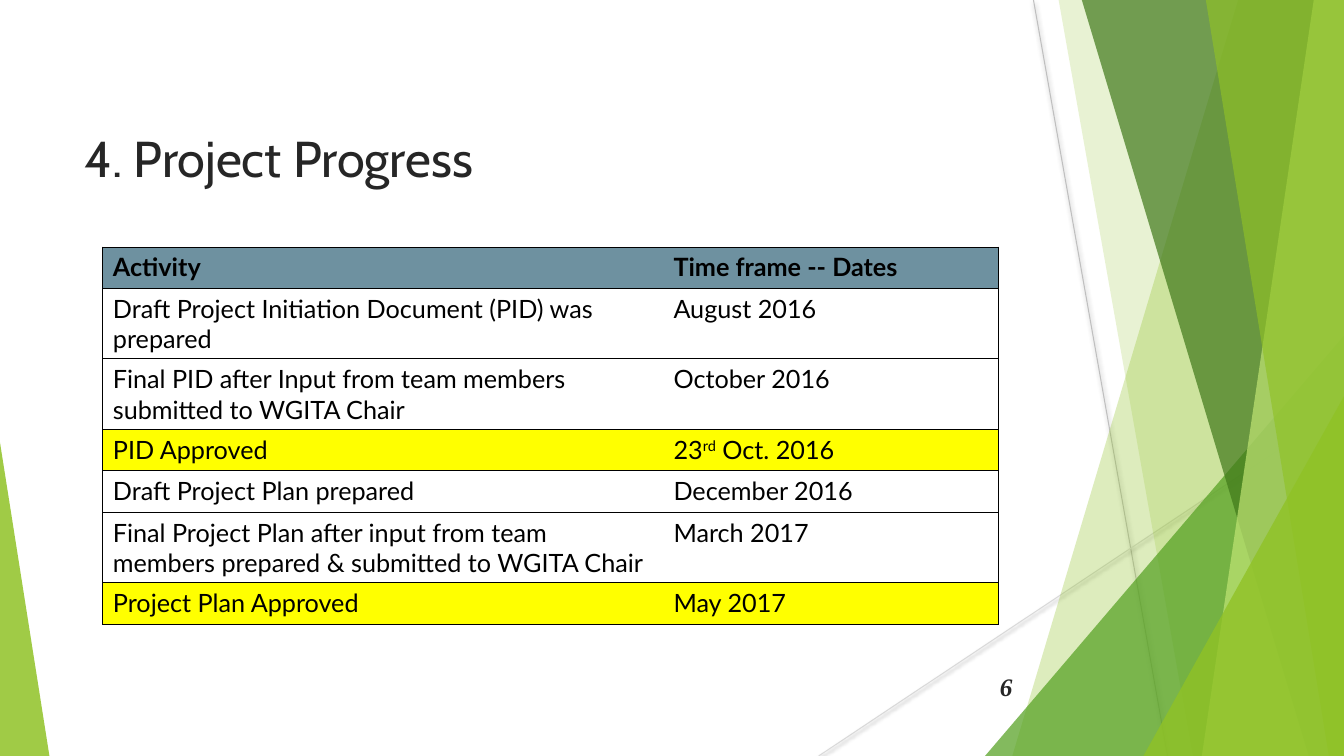
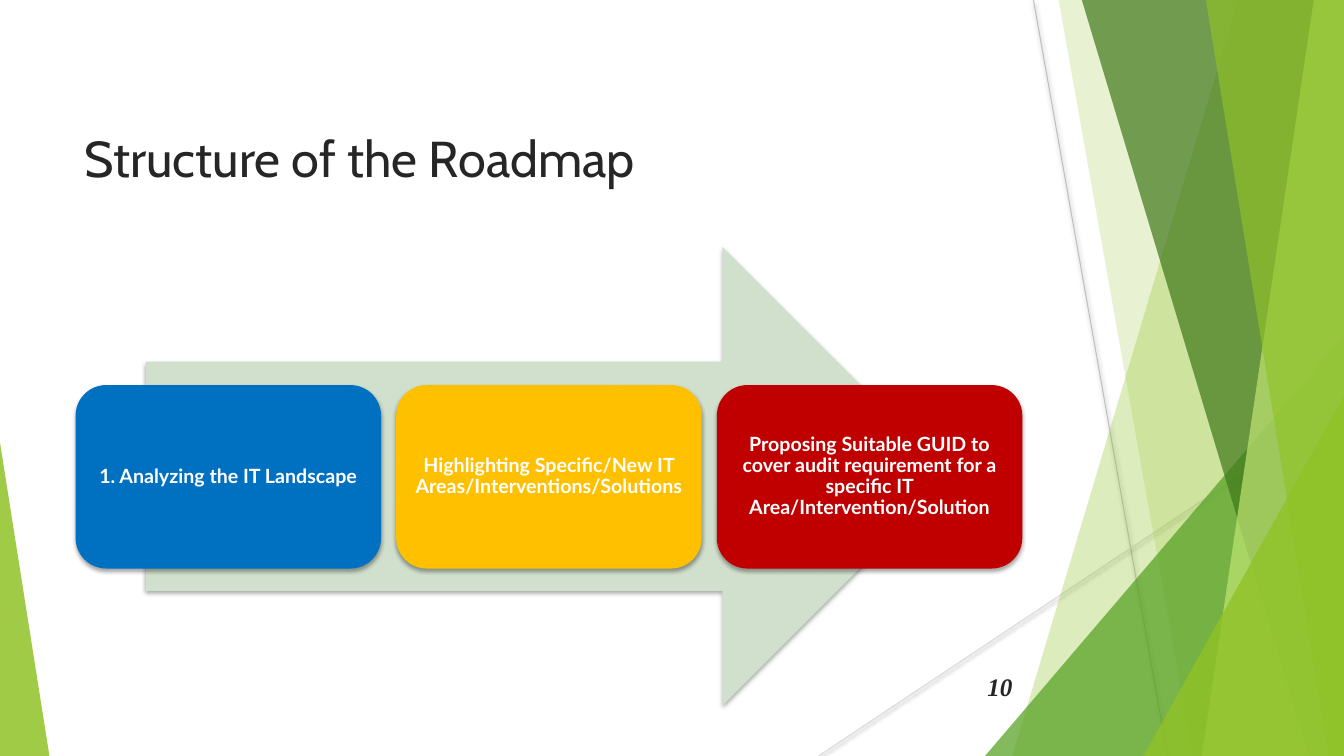
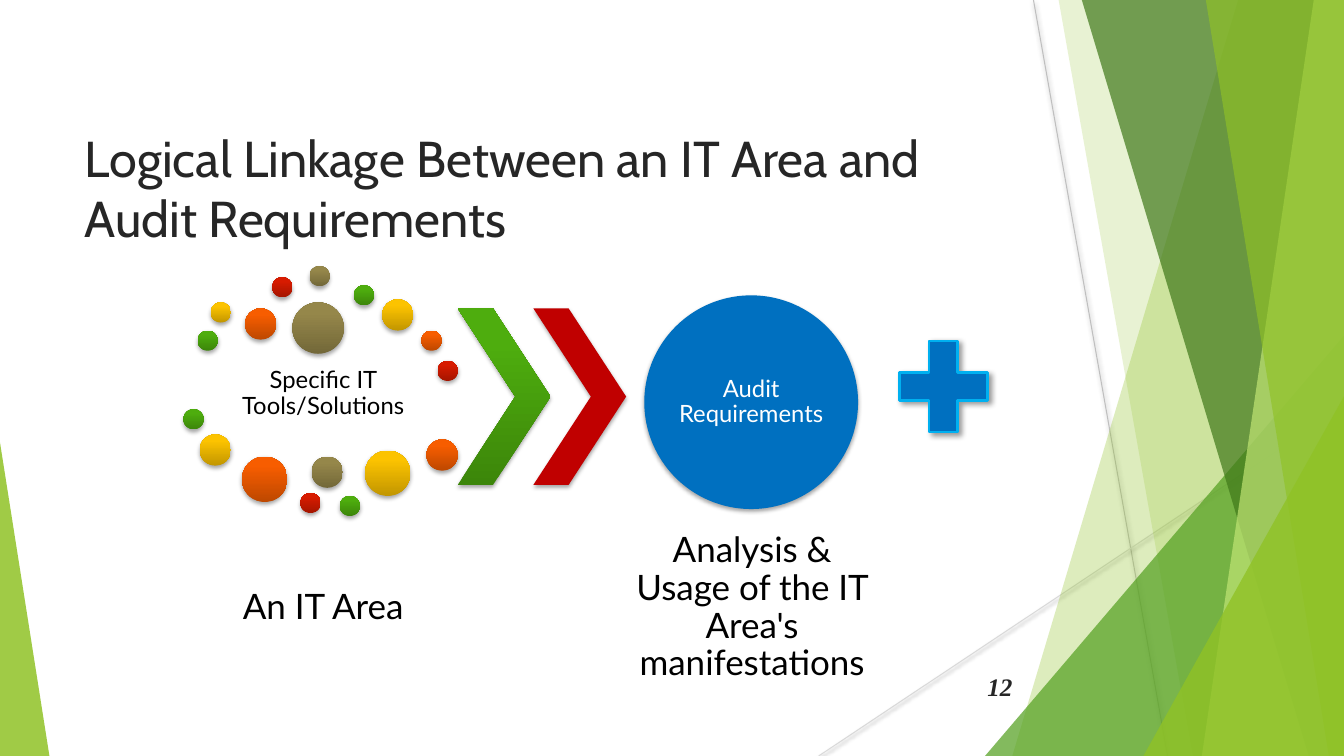
from itertools import cycle

from lxml.etree import SubElement
from pptx import Presentation
from pptx.dml.color import RGBColor
from pptx.enum.shapes import MSO_CONNECTOR, MSO_SHAPE
from pptx.enum.text import MSO_ANCHOR, MSO_AUTO_SIZE, PP_ALIGN
from pptx.oxml import parse_xml
from pptx.oxml.ns import nsdecls, qn
from pptx.util import Inches, Pt

BLACK = RGBColor(0x00, 0x00, 0x00)
WHITE = RGBColor(0xFF, 0xFF, 0xFF)
INK = RGBColor(0x26, 0x26, 0x26)
SILVER = RGBColor(0xBF, 0xBF, 0xBF)
PALE_GREY = RGBColor(0xD9, 0xD9, 0xD9)
LIME = RGBColor(0x90, 0xC2, 0x26)
LEAF = RGBColor(0x54, 0xA0, 0x21)
FOREST = RGBColor(0x3F, 0x78, 0x19)
PALE_LIME = RGBColor(0xC0, 0xE4, 0x74)
SAGE = RGBColor(0xD1, 0xDF, 0xCD)
SLATE = RGBColor(0x6E, 0x91, 0xA0)
BRIGHT_YELLOW = RGBColor(0xFF, 0xFF, 0x00)
BLUE = RGBColor(0x00, 0x70, 0xC0)
SKY = RGBColor(0x00, 0xB0, 0xF0)
AMBER = RGBColor(0xFF, 0xC0, 0x00)
RED = RGBColor(0xC0, 0x00, 0x00)
GREEN_SHADES = RGBColor(0x4E, 0xAD, 0x0E), RGBColor(0x3C, 0x86, 0x0A)
DOT_SHADES = [
    GREEN_SHADES,
    (RGBColor(0xFC, 0xC3, 0x00), RGBColor(0xC2, 0x96, 0x00)),
    (RGBColor(0xF7, 0x5D, 0x00), RGBColor(0xBE, 0x48, 0x00)),
    (RGBColor(0xD7, 0x1B, 0x00), RGBColor(0xA5, 0x15, 0x00)),
    (RGBColor(0x95, 0x87, 0x4A), RGBColor(0x73, 0x68, 0x39)),
]

# Blur and distance in points, angle in degrees, opacity in percent
SOFT_SHADOW = (3.1, 1.8, 90, 35)
LINE_SHADOW = (3.1, 1.6, 90, 38)
PLUS_SHADOW = (4, 3, 45, 40)
SHADOW_XML = (
    "<a:effectLst %s>"
    '<a:outerShdw blurRad="%d" dist="%d" dir="%d" algn="t" rotWithShape="0">'
    '<a:srgbClr val="000000"><a:alpha val="%d"/></a:srgbClr>'
    "</a:outerShdw></a:effectLst>"
)


def paint(shape, color=None, dark=None, alpha=100, shadow=None):
    """Fill without outline; dark adds a gradient, color None leaves the look as it is."""
    if dark:
        shape.fill.gradient()
        shape.fill.gradient_angle = 90
        bottom, top = shape.fill.gradient_stops
        bottom.color.rgb = dark
        top.color.rgb = color
        top.position = 0.8
    elif color:
        shape.fill.solid()
        shape.fill.fore_color.rgb = color
    if color:
        shape.line.fill.background()
    spPr = shape.element.spPr
    if alpha < 100:
        rgb = spPr.find(qn("a:solidFill")).find(qn("a:srgbClr"))
        SubElement(rgb, qn("a:alpha")).set("val", str(alpha * 1000))
    if shadow:
        blur, dist, angle, opacity = shadow
        spPr.append(parse_xml(SHADOW_XML % (
            nsdecls("a"), Pt(blur), Pt(dist), angle * 60000, opacity * 1000)))
    else:
        shape.shadow.inherit = False


def write(shape, text, size, color, font="Lato", bold=False, italic=False,
          align=PP_ALIGN.CENTER, anchor=MSO_ANCHOR.MIDDLE, inset=None, spacing=0.9):
    tf = shape.text_frame
    tf.word_wrap = True
    tf.auto_size = MSO_AUTO_SIZE.NONE
    tf.vertical_anchor = anchor
    if inset is not None:
        tf.margin_left = tf.margin_right = tf.margin_top = tf.margin_bottom = Inches(inset)
    p = tf.paragraphs[0]
    p.alignment = align
    p.line_spacing = spacing
    r = p.add_run()
    r.text = text
    r.font.name, r.font.size = font, Pt(size)
    r.font.bold, r.font.italic = bold, italic
    r.font.color.rgb = color


prs = Presentation()
prs.slide_width = Inches(13.33)
prs.slide_height = Inches(7.5)
layout = prs.slide_layouts[5]

# Titles and slide numbers
slides = []
for title, number in [
    ("4. Project Progress", "6"),
    ("Structure of the Roadmap", "10"),
    ("Logical Linkage Between an IT Area and Audit Requirements", "12"),
]:
    s = prs.slides.add_slide(layout)
    sp = s.shapes.title
    sp.left, sp.top, sp.width, sp.height = Inches(0.74), Inches(1.21), Inches(9.4), Inches(1.44)
    write(sp, title, 36, INK, "Cabin", align=PP_ALIGN.LEFT, anchor=MSO_ANCHOR.TOP, spacing=1)
    sp = s.shapes.add_textbox(Inches(9.39), Inches(6.61), Inches(0.75), Inches(0.4))
    write(sp, number, 18, INK, "Times New Roman", True, True, PP_ALIGN.RIGHT, spacing=1)
    slides.append(s)
progress, roadmap, linkage = slides

# Green bands, drawn once and then moved behind the layout's placeholders
shapes = progress.shapes
art = []
for x1, y1, x2, y2, color in [
    (10.25, 0, 11.58, 7.5, SILVER),
    (13.33, 4.03, 8.12, 7.5, PALE_GREY),
]:
    ray = shapes.add_connector(MSO_CONNECTOR.STRAIGHT, Inches(x1), Inches(y1), Inches(x2), Inches(y2))
    ray.line.color.rgb = color
    ray.line.width = Pt(0.75)
    paint(ray, shadow=LINE_SHADOW)
    art.append(ray)

# Each band runs from its slanted left side to the right edge of the slide
for top_x, top_y, bottom_x, color, alpha in [
    (12.28, 0, 10.04, LIME, 30),
    (10.5, 0, 11.83, LIME, 20),
    (13.33, 3.33, 9.77, LEAF, 72),
    (10.73, 0, 12.98, FOREST, 70),
    (13.03, 0, 11.92, PALE_LIME, 70),
    (11.96, 0, 13.18, LIME, 65),
    (13.33, 3.93, 11.34, LIME, 80),
]:
    if top_x == 13.33:
        band = shapes.add_shape(MSO_SHAPE.ISOSCELES_TRIANGLE, Inches(bottom_x), Inches(top_y),
                                Inches(13.33 - bottom_x), Inches(7.5 - top_y))
        band.adjustments[0] = 1
    else:
        outline = shapes.build_freeform(Inches(top_x), Inches(top_y))
        corners = [(13.33, top_y), (13.33, 7.5), (bottom_x, 7.5)]
        outline.add_line_segments([(Inches(x), Inches(y)) for x, y in corners])
        band = outline.convert_to_shape()
    paint(band, color, alpha=alpha)
    art.append(band)

corner = shapes.add_shape(MSO_SHAPE.ISOSCELES_TRIANGLE, 0, Inches(4.39), Inches(0.49), Inches(3.11))
corner.adjustments[0] = 0
paint(corner, LIME, alpha=85)
art.append(corner)
for i, sp in enumerate(art):
    layout.shapes.element.insert(2 + i, sp.element)

# Project progress table: activity, date runs, row height, fill
ROWS = [
    ("Activity", ["Time frame -- Dates"], 0.41, SLATE),
    ("Draft Project Initiation Document (PID) was prepared", ["August 2016"], 0.7, None),
    ("Final PID after Input from team members submitted to WGITA Chair", ["October 2016"], 0.7, None),
    ("PID Approved", ["23", "rd", " Oct. 2016"], 0.41, BRIGHT_YELLOW),
    ("Draft Project Plan prepared", ["December 2016"], 0.41, None),
    ("Final Project Plan after input from team members prepared & submitted to WGITA Chair",
     ["March 2017"], 0.7, None),
    ("Project Plan Approved", ["May 2017"], 0.41, BRIGHT_YELLOW),
]
table = progress.shapes.add_table(len(ROWS), 2, Inches(1.02), Inches(2.45),
                                  Inches(8.88), Inches(3.74)).table
table.first_row = table.horz_banding = False
table.columns[0].width, table.columns[1].width = Inches(5.56), Inches(3.32)
for i, (activity, date, height, color) in enumerate(ROWS):
    table.rows[i].height = Inches(height)
    for j, texts in enumerate([[activity], date]):
        cell = table.cell(i, j)
        if color:
            cell.fill.solid()
            cell.fill.fore_color.rgb = color
        else:
            cell.fill.background()
        for text in texts:
            r = cell.text_frame.paragraphs[0].add_run()
            r.text = text
            r.font.name, r.font.size = "Lato", Pt(18)
            r.font.bold = i == 0
            r.font.color.rgb = BLACK
            if text == "rd":
                r._r.get_or_add_rPr().set("baseline", "30000")
        inner_side = "lnR" if j == 0 else "lnL"
        for k, side in enumerate(["lnL", "lnR", "lnT", "lnB"]):
            line = "<a:noFill/>" if side == inner_side else (
                '<a:solidFill><a:srgbClr val="000000"/></a:solidFill>')
            cell._tc.get_or_add_tcPr().insert(k, parse_xml(
                f'<a:{side} {nsdecls("a")} w="{Pt(0.75)}">{line}</a:{side}>'))

# Roadmap: three steps on an arrow
arrow = roadmap.shapes.add_shape(MSO_SHAPE.RIGHT_ARROW, Inches(1.45), Inches(2.45),
                                 Inches(7.99), Inches(4.55))
paint(arrow, SAGE, shadow=SOFT_SHADOW)
for i, (text, color) in enumerate([
    ("1. Analyzing the IT Landscape", BLUE),
    ("Highlighting Specific/New IT Areas/Interventions/Solutions", AMBER),
    ("Proposing Suitable GUID to cover audit requirement for a specific IT "
     "Area/Intervention/Solution", RED),
]):
    step = roadmap.shapes.add_shape(MSO_SHAPE.ROUNDED_RECTANGLE, Inches(0.75 + 3.18 * i),
                                    Inches(3.82), Inches(3.03), Inches(1.82))
    paint(step, color, shadow=SOFT_SHADOW)
    write(step, text, 14, WHITE, bold=True, inset=0.06)

# Linkage: a cloud of dots leads to the audit requirements
for text, size, left, top, width, height in [
    ("Specific IT Tools/Solutions", 17, 1.96, 3.5, 2.49, 0.82),
    ("An IT Area", 25, 1.96, 5.26, 2.49, 1.54),
    ("Analysis & Usage of the IT Area's manifestations", 25, 6.21, 5.26, 2.5, 1.54),
]:
    sp = linkage.shapes.add_textbox(Inches(left), Inches(top), Inches(width), Inches(height))
    write(sp, text, size, BLACK, inset=0.03)

DOTS = [
    (1.96, 3.28, 0.2), (2.09, 3, 0.2), (2.43, 3.06, 0.31), (2.7, 2.75, 0.2), (3.07, 2.64, 0.2),
    (3.51, 2.83, 0.2), (3.79, 2.97, 0.31), (4.18, 3.28, 0.2), (4.34, 3.58, 0.2), (2.9, 3, 0.51),
    (1.82, 4.06, 0.2), (1.98, 4.31, 0.31), (2.4, 4.53, 0.45), (2.98, 4.89, 0.2), (3.09, 4.53, 0.31),
    (3.37, 4.92, 0.2), (3.62, 4.47, 0.45), (4.23, 4.36, 0.31),
]
for (left, top, size), (light, dark) in zip(DOTS, cycle(DOT_SHADES)):
    dot = linkage.shapes.add_shape(MSO_SHAPE.OVAL, Inches(left), Inches(top), Inches(size), Inches(size))
    paint(dot, light, dark, shadow=SOFT_SHADOW)

for left, shades in [(4.54, GREEN_SHADES), (5.29, (RED,))]:
    chevron = linkage.shapes.add_shape(MSO_SHAPE.CHEVRON, Inches(left), Inches(3.06),
                                       Inches(0.92), Inches(1.75))
    chevron.adjustments[0] = 0.62
    paint(chevron, *shades, shadow=SOFT_SHADOW)

audit = linkage.shapes.add_shape(MSO_SHAPE.OVAL, Inches(6.39), Inches(2.93), Inches(2.12), Inches(2.12))
paint(audit, BLUE, shadow=SOFT_SHADOW)
write(audit, "Audit Requirements", 17, WHITE, inset=0)

plus = linkage.shapes.add_shape(MSO_SHAPE.MATH_PLUS, Inches(8.76), Inches(3.22), Inches(1.19), Inches(1.23))
paint(plus, BLUE, shadow=PLUS_SHADOW)
plus.line.color.rgb = SKY
plus.line.width = Pt(2)

prs.save("out.pptx")
